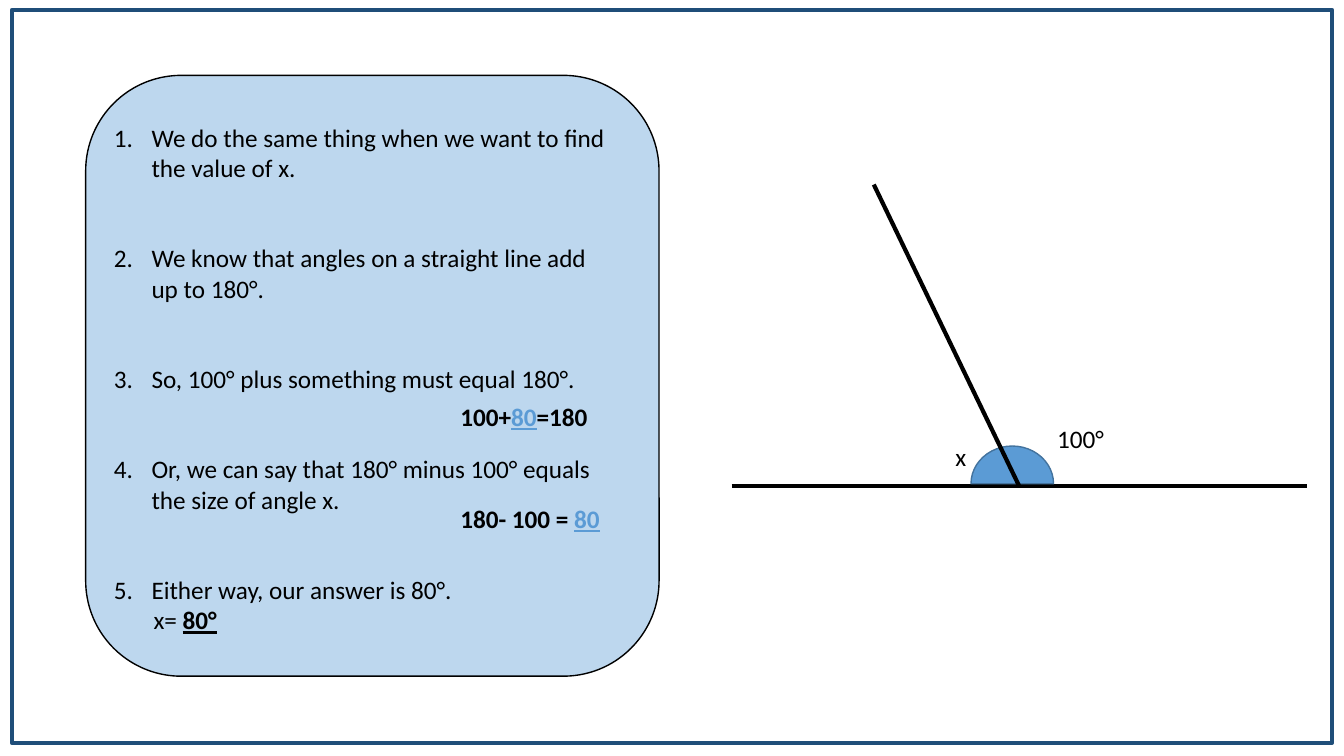
from dataclasses import dataclass

from lxml.etree import SubElement
from pptx import Presentation
from pptx.dml.color import RGBColor as RGB
from pptx.enum.shapes import MSO_CONNECTOR as CONN, MSO_SHAPE as SHAPE
from pptx.enum.text import PP_ALIGN as ALIGN
from pptx.oxml.ns import qn
from pptx.util import Cm, Pt


@dataclass(frozen=True)
class Theme:
    """Colours, font and sizes of the slide."""
    ink: RGB = RGB.from_string("000000")
    frame: RGB = RGB.from_string("1F4E79")
    panel: RGB = RGB.from_string("BDD7EE")
    accent: RGB = RGB.from_string("5B9BD5")
    accent_edge: RGB = RGB.from_string("43739E")
    font: str = "Calibri"
    size: Pt = Pt(18)
    thin: Pt = Pt(1)
    thick: Pt = Pt(3)


T = Theme()
STEPS = [
    "We do the same thing when we want to find the value of x.",
    "We know that angles on a straight line add up to 180°.",
    "So, 100° plus something must equal 180°.",
    "Or, we can say that 180° minus 100° equals the size of angle x.",
    "Either way, our answer is 80°.",
]
BOLD = {"bold": True}
RESULT = {"bold": True, "underline": True}


def add_run(p, text, color=T.ink, **fmt):
    """Add a run in the theme font with extra format values."""
    r = p.add_run()
    r.text = text
    for name, value in {"name": T.font, "size": T.size, **fmt}.items():
        setattr(r.font, name, value)
    r.font.color.rgb = color


def add_text(shapes, x, y, w, h):
    """Add a wrapping text box and return its text frame."""
    tf = shapes.add_textbox(Cm(x), Cm(y), Cm(w), Cm(h)).text_frame
    tf.word_wrap = True
    return tf


def add_box(shapes, kind, x, y, w, h, fill, edge, width):
    """Add a flat preset shape, unfilled when fill is None."""
    sp = shapes.add_shape(kind, Cm(x), Cm(y), Cm(w), Cm(h))
    sp.shadow.inherit = False
    if fill is None:
        sp.fill.background()
    else:
        sp.fill.solid()
        sp.fill.fore_color.rgb = fill
    sp.line.color.rgb = edge
    sp.line.width = width
    return sp


def add_line(shapes, x1, y1, x2, y2):
    """Add a thick straight line."""
    line = shapes.add_connector(CONN.STRAIGHT, Cm(x1), Cm(y1), Cm(x2), Cm(y2))
    line.line.color.rgb = T.ink
    line.line.width = T.thick
    SubElement(line._element.spPr, qn("a:effectLst"))


def number_step(p):
    """Give a paragraph a hanging automatic number."""
    pPr = p._p.get_or_add_pPr()
    pPr.set("marL", str(Cm(0.95)))
    pPr.set("indent", str(-Cm(0.95)))
    SubElement(pPr, qn("a:buFont"), typeface="+mj-lt")
    SubElement(pPr, qn("a:buAutoNum"), type="arabicPeriod")


def build_angle(shapes, x, y, w, h):
    """Draw the straight line, its arm and the two angle labels."""
    group = shapes.add_group_shape().shapes
    add_line(group, x, y + h, x + w, y + h)
    arc = add_box(group, SHAPE.PIE, x + 6.12, y + h - 1.09, 1.9, 2.08,
                  T.accent, T.accent_edge, T.thin)
    arc.rotation = 90
    arc.adjustments[0], arc.adjustments[1] = 54, 162
    add_line(group, x + 3.58, y, x + 7.24, y + h)
    for label, dx, dy, width in [("100°", 7.95, 1.7, 2), ("x", 5.39, 1.24, 1)]:
        tf = add_text(group, x + dx, y + h - dy, width, 1.02)
        add_run(tf.paragraphs[0], label)


def build_steps(shapes, x, y, w, h):
    """Draw the panel with the numbered steps and the two sums."""
    add_box(shapes, SHAPE.ROUNDED_RECTANGLE, x, y, w, h, T.panel, T.ink, T.thin)
    tf = add_text(shapes, x + 0.46, y + 1.05, 13.06, 13.34)
    for i, step in enumerate(STEPS):
        p = tf.add_paragraph() if i else tf.paragraphs[0]
        p.alignment = ALIGN.LEFT
        if i:
            p.space_before = Pt(43)
        number_step(p)
        add_run(p, step)
    answer = tf.add_paragraph()
    answer._p.get_or_add_pPr().set("marL", str(Cm(1)))
    add_run(answer, "x= ")
    add_run(answer, "80°", **RESULT)

    sums = [
        (8.08, [("100+", T.ink, BOLD), ("80", T.accent, RESULT), ("=180", T.ink, BOLD)]),
        (10.65, [("180- 100 = ", T.ink, BOLD), ("80", T.accent, RESULT)]),
    ]
    for dy, runs in sums:
        p = add_text(shapes, x + 9.19, y + dy, 4.4, 1.02).paragraphs[0]
        for text, color, fmt in runs:
            add_run(p, text, color, **fmt)


def main():
    """Build the slide and save it."""
    prs = Presentation()
    prs.slide_width, prs.slide_height = Cm(33.87), Cm(19.05)
    shapes = prs.slides.add_slide(prs.slide_layouts[6]).shapes
    add_box(shapes, SHAPE.RECTANGLE, 0.3, 0.25, 33.27, 18.47, None, T.frame, T.thick)
    build_angle(shapes, 18.44, 4.65, 14.5, 7.59)
    build_steps(shapes, 2.16, 1.9, 14.45, 15.14)
    prs.save("out.pptx")


if __name__ == "__main__":
    main()
